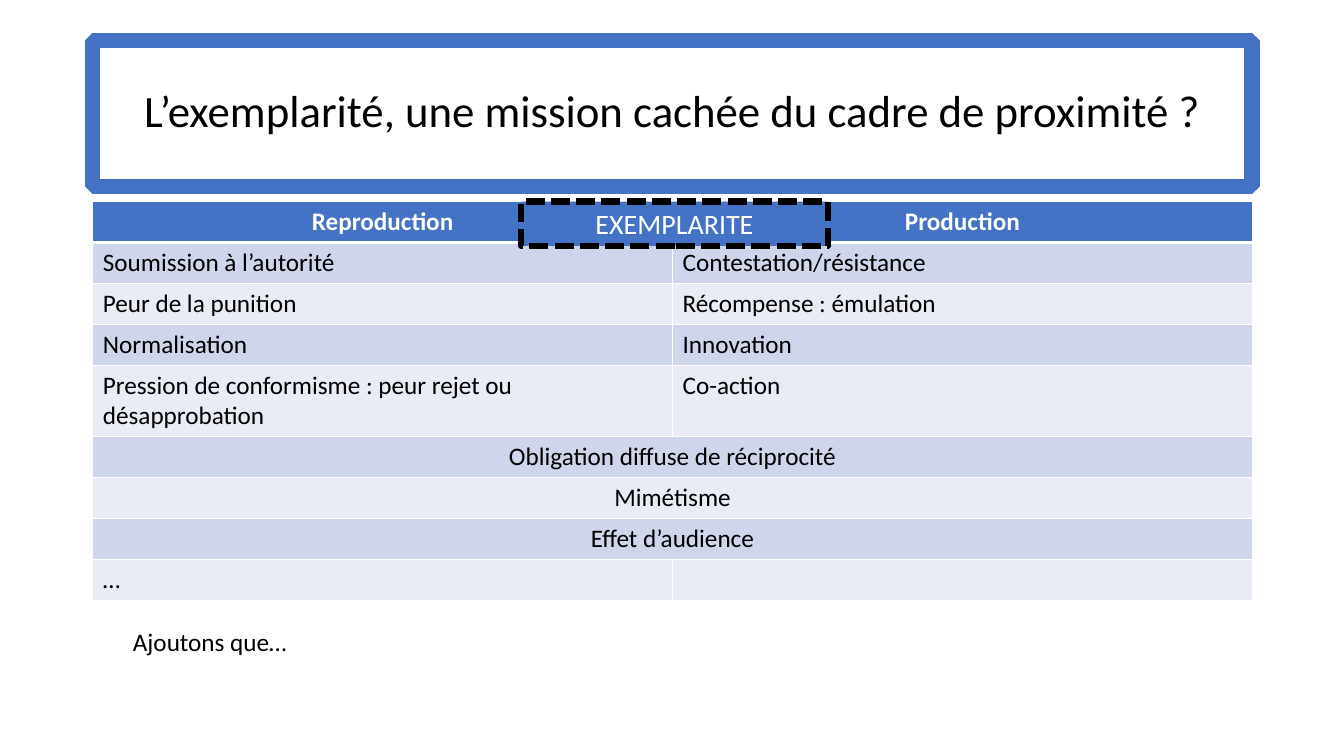
from lxml import etree
from pptx import Presentation
from pptx.dml.color import RGBColor
from pptx.enum.dml import MSO_LINE
from pptx.enum.shapes import MSO_SHAPE
from pptx.enum.text import MSO_ANCHOR, PP_ALIGN
from pptx.oxml.ns import qn
from pptx.util import Inches, Pt

RECT = MSO_SHAPE.RECTANGLE
DASH = MSO_LINE.SQUARE_DOT
MIDDLE = MSO_ANCHOR.MIDDLE
LEFT, CENTER = PP_ALIGN.LEFT, PP_ALIGN.CENTER

BLUE, WHITE, BLACK = "4472C4", "FFFFFF", "000000"
BANDS = ("CFD5EA", "E9EBF5")

ROWS = [
    ("Reproduction", "Production"),
    ("Soumission à l’autorité", "Contestation/résistance"),
    ("Peur de la punition", "Récompense : émulation"),
    ("Normalisation", "Innovation"),
    ("Pression de conformisme : peur rejet ou désapprobation", "Co-action"),
    ("Obligation diffuse de réciprocité",),
    ("Mimétisme",),
    ("Effet d’audience",),
    ("…", ""),
]


def color(code):
    return RGBColor.from_string(code)


def write(frame, text, size, ink=BLACK, align=LEFT, bold=False):
    para = frame.paragraphs[0]
    para.alignment = align
    run = para.add_run()
    run.text = text
    look = {"name": "Calibri", "size": Pt(size), "bold": bold}
    for key, value in look.items():
        setattr(run.font, key, value)
    run.font.color.rgb = color(ink)
    return para


def add_frame(slide, box, fill, line, width):
    shape = slide.shapes.add_shape(RECT, *map(Inches, box))
    shape.shadow.inherit = False
    shape.fill.solid()
    shape.fill.fore_color.rgb = color(fill)
    shape.line.color.rgb = color(line)
    shape.line.width = Pt(width)
    shape.text_frame.word_wrap = True
    shape.text_frame.vertical_anchor = MIDDLE
    return shape


def add_title(slide, box):
    shape = add_frame(slide, box, WHITE, BLUE, 11)
    etree.SubElement(shape.line._get_or_add_ln(), qn("a:bevel"))
    text = "L’exemplarité, une mission cachée du cadre de proximité ?"
    para = write(shape.text_frame, text, 32, align=CENTER)
    para.line_spacing = 0.9


def add_edges(cell, widths):
    props = cell._tc.get_or_add_tcPr()
    for side, width in zip("LRTB", widths):
        edge = etree.SubElement(props, qn("a:ln" + side), w=str(Pt(width)))
        fill = etree.SubElement(edge, qn("a:solidFill"))
        etree.SubElement(fill, qn("a:srgbClr"), val=WHITE)


def add_grid(slide, box):
    table = slide.shapes.add_table(len(ROWS), 2, *map(Inches, box)).table
    for i, texts in enumerate(ROWS):
        head, wide = i == 0, len(texts) == 1
        if wide:
            table.cell(i, 0).merge(table.cell(i, 1))
        for j in range(2):
            cell = table.cell(i, j)
            add_edges(cell, (1, 1, 3 if i == 1 else 1, 3 if head else 1))
            cell.fill.solid()
            cell.fill.fore_color.rgb = color(BLUE if head else BANDS[(i - 1) % 2])
        for j, text in enumerate(texts):
            write(table.cell(i, j).text_frame, text, 18,
                  WHITE if head else BLACK, CENTER if head or wide else LEFT, head)


def add_note(slide, box):
    frame = slide.shapes.add_textbox(*map(Inches, box)).text_frame
    frame.word_wrap = True
    write(frame, "Ajoutons que…", 18)


def add_label(slide, box):
    shape = add_frame(slide, box, BLUE, BLACK, 4.5)
    shape.line.dash_style = DASH
    shape.text_frame.vertical_anchor = MSO_ANCHOR.TOP
    write(shape.text_frame, "EXEMPLARITE", 20, WHITE, CENTER)


def main():
    deck = Presentation()
    deck.slide_width, deck.slide_height = Inches(13.33), Inches(7.5)
    slide = deck.slides.add_slide(deck.slide_layouts[6])
    add_title(slide, (0.92, 0.4, 11.5, 1.45))
    add_grid(slide, (0.92, 2, 11.5, 3.65))
    add_note(slide, (1.22, 6.16, 2.76, 0.4))
    add_label(slide, (5.17, 2, 3.04, 0.44))
    deck.save("out.pptx")


if __name__ == "__main__":
    main()
